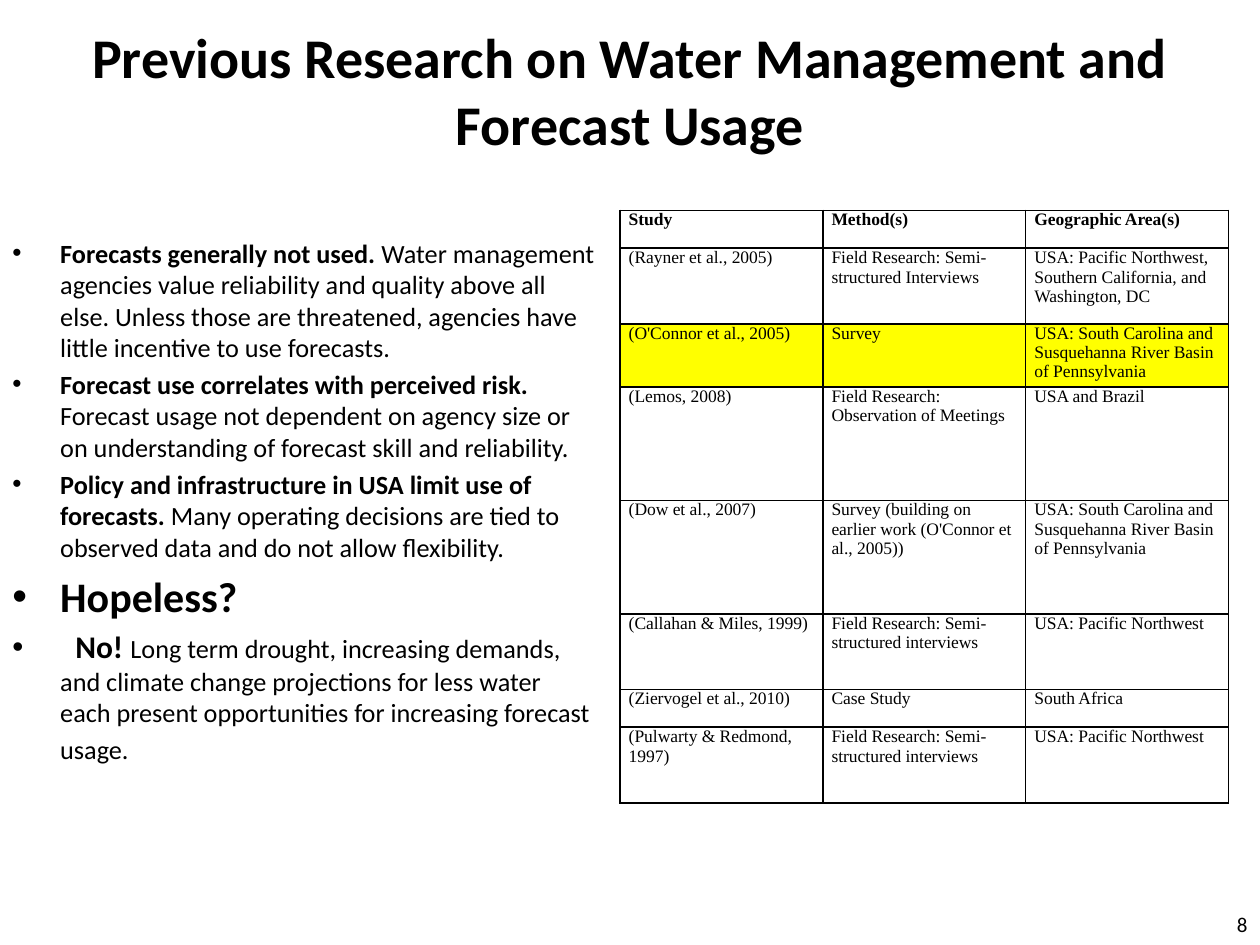
from lxml.etree import SubElement
from pptx import Presentation
from pptx.dml.color import RGBColor
from pptx.enum.text import MSO_ANCHOR as Anchor, PP_ALIGN as Align
from pptx.oxml.ns import qn
from pptx.util import Inches, Pt

BLACK = RGBColor(0, 0, 0)
YELLOW = RGBColor(255, 255, 0)
BODY_FONT, TABLE_FONT = "Calibri", "Times New Roman"
INDENT = Inches(0.38)

TITLE = "Previous Research on Water Management and Forecast Usage"

# Each bullet is a list of runs: text, size, bold
BULLETS = [
    [("Forecasts generally not used. ", 15, True),
     ("Water management agencies value reliability and quality above all else. "
      "Unless those are threatened, agencies have little incentive to use forecasts.",
      15, False)],
    [("Forecast use correlates with perceived risk. ", 15, True),
     ("Forecast usage not dependent on agency size or on understanding of "
      "forecast skill and reliability.", 15, False)],
    [("Policy and infrastructure in USA limit use of forecasts. ", 15, True),
     ("Many operating decisions are tied to observed data and do not allow "
      "flexibility.", 15, False)],
    [("Hopeless?", 24, True)],
    [("\tNo! ", 18, True),
     ("Long term drought, increasing demands, and climate change projections for "
      "less water each present opportunities for increasing forecast usage.",
      15, False),
     (" ", 18, False)],
]

INTERVIEWS = "Field Research: Semi-structured interviews"
NORTHWEST = "USA: Pacific Northwest"
EAST = "USA: South Carolina and Susquehanna River Basin of Pennsylvania"
HIGHLIGHTED_ROW = 2

# Row height in inches, then the cells
STUDIES = [
    (0.3, "Study", "Method(s)", "Geographic Area(s)"),
    (0.6, "(Rayner et al., 2005)", "Field Research: Semi-structured Interviews",
     "USA: Pacific Northwest, Southern California, and Washington, DC"),
    (0.3, "(O'Connor et al., 2005)", "Survey", EAST),
    (0.9, "(Lemos, 2008)", "Field Research: Observation of Meetings",
     "USA and Brazil"),
    (0.9, "(Dow et al., 2007)",
     "Survey (building on earlier work (O'Connor et al., 2005))", EAST),
    (0.6, "(Callahan & Miles, 1999)", INTERVIEWS, NORTHWEST),
    (0.3, "(Ziervogel et al., 2010)", "Case Study", "South Africa"),
    (0.6, "(Pulwarty & Redmond, 1997)", INTERVIEWS, NORTHWEST),
]


def add_run(paragraph, text, size, bold=False, font=BODY_FONT):
    run = paragraph.add_run()
    run.text = text
    run.font.name = font
    run.font.size = Pt(size)
    run.font.bold = bold
    run.font.color.rgb = BLACK


def add_text_box(slide, left, top, width, height):
    shape = slide.shapes.add_textbox(
        Inches(left), Inches(top), Inches(width), Inches(height))
    shape.text_frame.word_wrap = True
    return shape.text_frame


def set_title(slide, width):
    title = slide.shapes.title
    title.left, title.top, title.width, title.height = 0, 0, width, Inches(1.42)
    title.text_frame.vertical_anchor = Anchor.MIDDLE
    paragraph = title.text_frame.paragraphs[0]
    paragraph.alignment = Align.CENTER
    add_run(paragraph, TITLE, 32, True)


def format_bullet(paragraph):
    properties = paragraph._p.get_or_add_pPr()
    properties.set("marL", str(INDENT))
    properties.set("indent", str(-INDENT))
    SubElement(properties, qn("a:buFont"), typeface="Arial")
    SubElement(properties, qn("a:buChar"), char="•")
    tabs = SubElement(properties, qn("a:tabLst"))
    SubElement(tabs, qn("a:tab"), pos=str(Inches(0.5)), algn="l")


def add_bullets(slide):
    frame = add_text_box(slide, 0, 1.83, 4.83, 4.95)
    for index, runs in enumerate(BULLETS):
        paragraph = frame.add_paragraph() if index else frame.paragraphs[0]
        paragraph.space_before = Pt(0.2 * runs[0][1])
        format_bullet(paragraph)
        for text, size, bold in runs:
            add_run(paragraph, text, size, bold)


def add_borders(cell):
    properties = cell._tc.get_or_add_tcPr()
    for position, side in enumerate(("a:lnL", "a:lnR", "a:lnT", "a:lnB")):
        line = SubElement(properties, qn(side), w=str(Pt(1)))
        fill = SubElement(line, qn("a:solidFill"))
        SubElement(fill, qn("a:srgbClr"), val=str(BLACK))
        # Borders come before the fill in the cell properties
        properties.insert(position, line)


def add_study_table(slide):
    columns = len(STUDIES[0]) - 1
    table = slide.shapes.add_table(
        len(STUDIES), columns, Inches(4.92), Inches(1.67), Inches(4.83),
        Inches(sum(row[0] for row in STUDIES))).table
    for row_index, (height, *texts) in enumerate(STUDIES):
        table.rows[row_index].height = Inches(height)
        for column, text in enumerate(texts):
            cell = table.cell(row_index, column)
            cell.margin_left = cell.margin_right = Inches(0.07)
            cell.margin_top = cell.margin_bottom = 0
            if row_index == HIGHLIGHTED_ROW:
                cell.fill.solid()
                cell.fill.fore_color.rgb = YELLOW
            else:
                cell.fill.background()
            add_borders(cell)
            add_run(cell.text_frame.paragraphs[0], text, 10,
                    row_index == 0, TABLE_FONT)


def add_slide_number(slide):
    frame = add_text_box(slide, 8.92, 7.17, 1.08, 0.33)
    frame.vertical_anchor = Anchor.MIDDLE
    frame.paragraphs[0].alignment = Align.RIGHT
    add_run(frame.paragraphs[0], "8", 12)


def main():
    presentation = Presentation()
    presentation.slide_width = Inches(10)
    presentation.slide_height = Inches(7.5)
    slide = presentation.slides.add_slide(presentation.slide_layouts[5])
    set_title(slide, presentation.slide_width)
    add_bullets(slide)
    add_slide_number(slide)
    add_study_table(slide)
    presentation.save("out.pptx")


if __name__ == "__main__":
    main()
